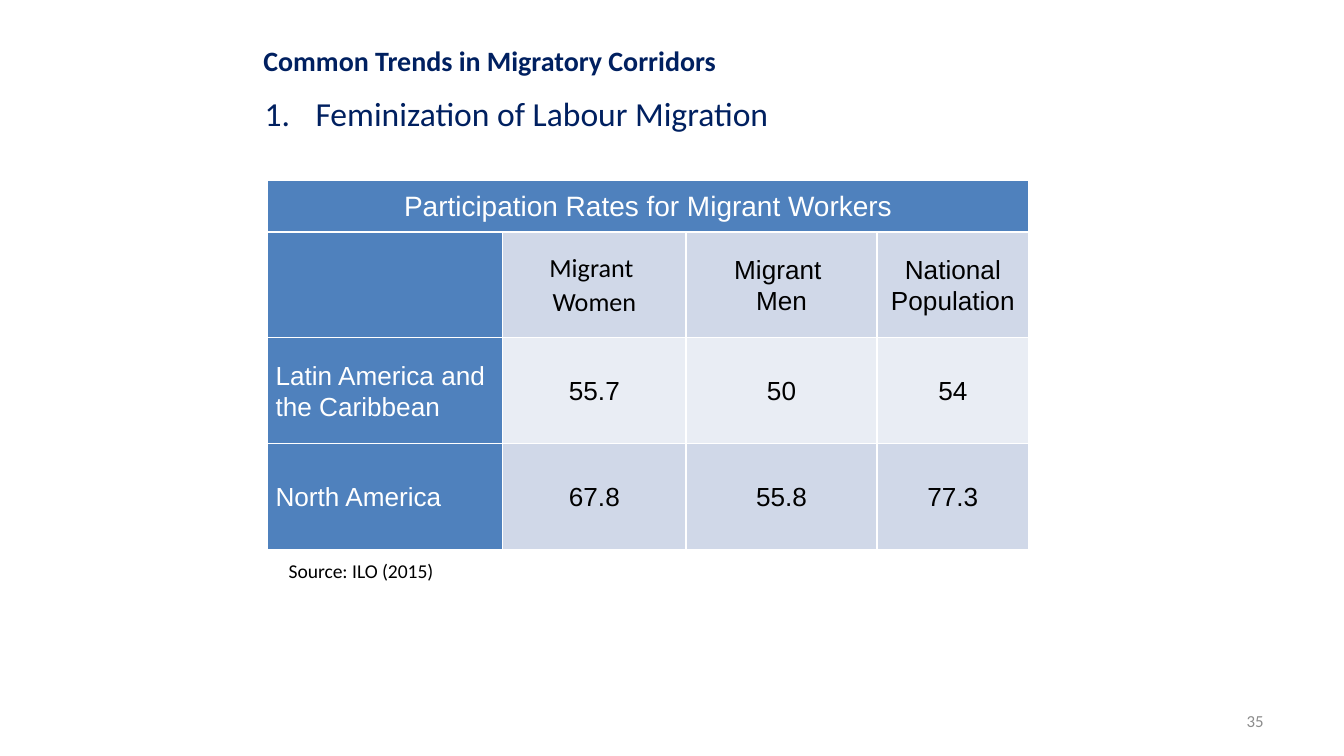
from dataclasses import dataclass
from lxml import etree
from pptx import Presentation
from pptx.dml.color import RGBColor
from pptx.enum.text import MSO_ANCHOR, MSO_AUTO_SIZE, PP_ALIGN
from pptx.oxml.ns import qn
from pptx.util import Inches, Pt

LEFT, CENTER, RIGHT = PP_ALIGN.LEFT, PP_ALIGN.CENTER, PP_ALIGN.RIGHT
JUSTIFY = PP_ALIGN.JUSTIFY
TOP, MIDDLE = MSO_ANCHOR.TOP, MSO_ANCHOR.MIDDLE
GROW = MSO_AUTO_SIZE.SHAPE_TO_FIT_TEXT


@dataclass
class Theme:
    navy: str = "002060"
    blue: str = "4F81BD"
    band_dark: str = "D0D8E8"
    band_light: str = "E9EDF4"
    white: str = "FFFFFF"
    black: str = "000000"
    grey: str = "8C8C8C"
    body_font: str = "Calibri"
    table_font: str = "Arial"
    heading: float = 15
    topic: float = 18
    cell: float = 14
    source: float = 10.5
    number: float = 9


theme = Theme()
deck = Presentation()
deck.slide_width = Inches(10)
deck.slide_height = deck.slide_width * 9 // 16
UNIT = deck.slide_width / 100
page = deck.slides.add_slide(deck.slide_layouts[5])


def write(frame, text, size, color, font=theme.body_font, align=LEFT, bold=False):
    frame.text = text
    para = frame.paragraphs[0]
    para.alignment = align
    for span in para.runs:
        span.font.size, span.font.name, span.font.bold = Pt(size), font, bold
        span.font.color.rgb = RGBColor.from_string(color)
    return para


def place(box, left, top, width, height, wrap, anchor=TOP):
    box.left, box.top = round(left * UNIT), round(top * UNIT)
    box.width, box.height = round(width * UNIT), round(height * UNIT)
    frame = box.text_frame
    frame.word_wrap, frame.vertical_anchor = wrap, anchor
    return frame


topic = place(page.shapes.add_textbox(0, 0, 0, 0), 18.7, 6.4, 62.6, 4, True)
topic.auto_size = GROW
para = write(topic, "Feminization of Labour Migration", theme.topic, theme.navy, align=JUSTIFY)
numbering = para._p.get_or_add_pPr()
numbering.set("marL", str(Inches(0.38)))
numbering.set("indent", str(-Inches(0.38)))
etree.SubElement(numbering, qn("a:buFont"), typeface="+mj-lt")
etree.SubElement(numbering, qn("a:buAutoNum"), type="arabicPeriod")

rates = [
    ["Participation Rates for Migrant Workers", "", "", ""],
    ["", "Migrant \vWomen", "Migrant \vMen", "National Population"],
    ["Latin America and the Caribbean", "55.7", "50", "54"],
    ["North America", "67.8", "55.8", "77.3"],
]
column_widths = [17.5, 13.65, 14.2, 11.3]
row_heights = [3.85, 7.88, 7.88, 7.88]
table = page.shapes.add_table(
    len(rates), len(column_widths), round(19.9 * UNIT), round(13.4 * UNIT),
    round(sum(column_widths) * UNIT), round(sum(row_heights) * UNIT)).table
for column, width in zip(table.columns, column_widths):
    column.width = round(width * UNIT)
for row, height in zip(table.rows, row_heights):
    row.height = round(height * UNIT)

for r, texts in enumerate(rates):
    for c, text in enumerate(texts):
        cell = table.cell(r, c)
        is_header = r == 0 or c == 0
        properties = cell._tc.get_or_add_tcPr()
        for side in ("lnL", "lnR", "lnT", "lnB"):
            line = etree.SubElement(properties, qn(f"a:{side}"), w=str(Pt(1)))
            paint = etree.SubElement(line, qn("a:solidFill"))
            etree.SubElement(paint, qn("a:srgbClr"), val=theme.white)
        band = theme.band_light if r == 2 else theme.band_dark
        cell.fill.solid()
        cell.fill.fore_color.rgb = RGBColor.from_string(theme.blue if is_header else band)
        cell.vertical_anchor = MIDDLE
        cell.margin_left = cell.margin_right = Inches(0.06)
        cell.margin_top = cell.margin_bottom = 0
        para = write(
            cell.text_frame, text,
            theme.heading if r == 0 else theme.cell,
            theme.white if is_header else theme.black,
            theme.body_font if (r, c) == (1, 1) else theme.table_font,
            LEFT if c == 0 and r > 0 else CENTER)
        para.line_spacing = 1.07
table.cell(0, 0).merge(table.cell(0, 3))

source = place(page.shapes.add_textbox(0, 0, 0, 0), 20.5, 41.1, 13, 2.8, False)
source.auto_size = GROW
write(source, "Source: ILO (2015)", theme.source, theme.black)

number = place(page.shapes.add_textbox(0, 0, 0, 0), 71.7, 52.15, 23.3, 3, True, MIDDLE)
write(number, "35", theme.number, theme.grey, align=RIGHT)

title = place(page.shapes.title, 18.4, 2.75, 36.1, 3.5, False)
title.auto_size = GROW
write(title, "Common Trends in Migratory Corridors", theme.heading, theme.navy,
      align=CENTER, bold=True)

deck.save("out.pptx")
